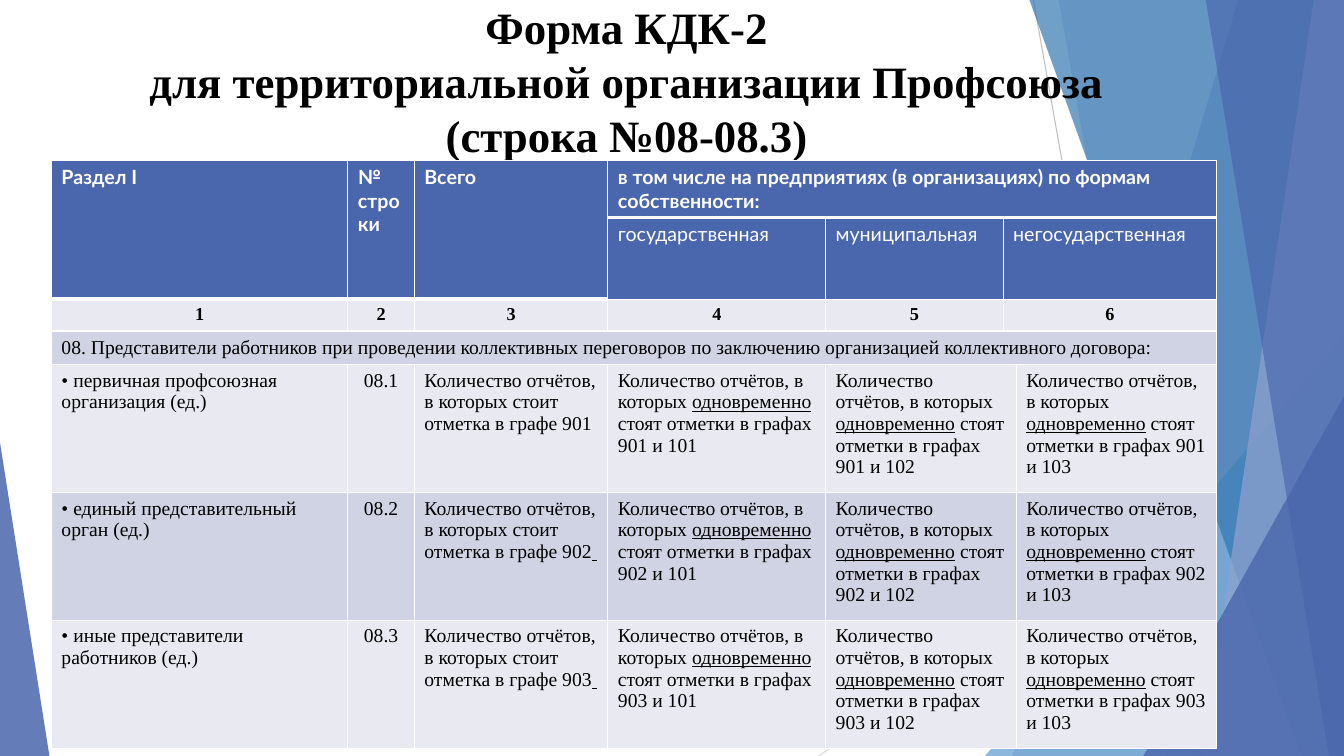
from lxml import etree
from pptx import Presentation
from pptx.dml.color import RGBColor
from pptx.enum.shapes import MSO_CONNECTOR, MSO_SHAPE
from pptx.enum.text import MSO_ANCHOR, PP_ALIGN
from pptx.oxml.ns import qn
from pptx.util import Inches, Pt

LEFT, CENTER = PP_ALIGN.LEFT, PP_ALIGN.CENTER
TOP, MIDDLE = MSO_ANCHOR.TOP, MSO_ANCHOR.MIDDLE
STRAIGHT = MSO_CONNECTOR.STRAIGHT
TRIANGLE = MSO_SHAPE.ISOSCELES_TRIANGLE

WIDTH, HEIGHT = 13.33, 7.5
SERIF, SANS = "Times New Roman", "Lato"
COLORS = {
    "indigo": "4A66AC", "sky": "629DD1", "blue": "3477B2", "lavender": "90A2CF",
    "pale": "E9EAF1", "band": "D0D3E3", "white": "FFFFFF", "black": "000000",
    "gray": "BFBFBF", "light_gray": "D9D9D9",
}

TABLE_LEFT, TABLE_TOP = 0.51, 1.59
COLUMNS = [2.94, 0.66, 1.92, 2.16, 1.76, 0.13, 1.99]
ROWS = [0.56, 0.81, 0.31, 0.33] + [1.26] * 3

# Top left x, bottom left x, colour, opacity; each band runs to the right edge.
BANDS_BACK = [(12.28, 10.04, "indigo", 30), (10.5, 11.83, "indigo", 20)]
BANDS_FRONT = [
    (10.21, 12.91, "blue", 70),
    (13.03, 11.92, "lavender", 70),
    (11.96, 13.18, "indigo", 65),
]
REPRESENTATIVES = [
    "первичная профсоюзная организация (ед.)",
    "единый представительный орган (ед.)",
    "иные представители работников (ед.)",
]


def color(name):
    return RGBColor.from_string(COLORS[name])


def paint(shape, fill, opacity):
    shape.shadow.inherit = False
    shape.fill.solid()
    shape.fill.fore_color.rgb = color(fill)
    shape.line.fill.background()
    tint = shape.fill._xPr.find(".//" + qn("a:srgbClr"))
    etree.SubElement(tint, qn("a:alpha")).set("val", str(opacity * 1000))


def add_line(slide, start, end, line_color):
    line = slide.shapes.add_connector(STRAIGHT, *map(Inches, start + end))
    line.line.color.rgb = color(line_color)
    line.line.width = Pt(0.75)
    etree.SubElement(line._element.spPr, qn("a:effectLst"))


def add_band(slide, top_x, bottom_x, fill, opacity):
    corners = [(WIDTH, 0), (WIDTH, HEIGHT), (bottom_x, HEIGHT)]
    builder = slide.shapes.build_freeform(Inches(top_x), 0)
    builder.add_line_segments([(Inches(x), Inches(y)) for x, y in corners])
    paint(builder.convert_to_shape(), fill, opacity)


def add_corner(slide, left, top, width, apex, fill, opacity):
    """Triangle standing on the bottom edge, its apex at share apex of its width."""
    box = map(Inches, (left, top, width, HEIGHT - top))
    corner = slide.shapes.add_shape(TRIANGLE, *box)
    corner.adjustments[0] = apex
    paint(corner, fill, opacity)


def add_background(slide):
    add_line(slide, (10.25, 0), (11.58, HEIGHT), "gray")
    add_line(slide, (WIDTH, 4.03), (8.12, HEIGHT), "light_gray")
    for band in BANDS_BACK:
        add_band(slide, *band)
    add_corner(slide, 9.77, 3.33, 3.56, 1, "sky", 72)
    for band in BANDS_FRONT:
        add_band(slide, *band)
    add_corner(slide, 11.34, 3.93, 1.99, 1, "indigo", 80)
    add_corner(slide, 0, 4.39, 0.49, 0, "indigo", 85)


def write(frame, text, *, size=14, font=SERIF, ink="black", bold=False, align=LEFT):
    """Fill a text frame; parts between underscores are underlined."""
    frame.word_wrap = True
    for index, line in enumerate(text.split("\n")):
        para = frame.add_paragraph() if index else frame.paragraphs[0]
        para.alignment = align
        for part, words in enumerate(line.split("_")):
            if not words:
                continue
            span = para.add_run()
            span.text = words
            span.font.name = font
            span.font.size = Pt(size)
            span.font.bold = bold
            span.font.underline = part % 2 == 1
            span.font.color.rgb = color(ink)


def add_title(slide, text):
    box = slide.shapes.add_textbox(Inches(0.96), 0, Inches(10.51), Inches(1.6))
    frame = box.text_frame
    frame.margin_top = frame.margin_bottom = 0
    frame.vertical_anchor = MIDDLE
    write(frame, text, size=32, bold=True, align=CENTER)


def set_borders(cell, bottom=1):
    properties = cell._tc.get_or_add_tcPr()
    for side, points in (("L", 1), ("R", 1), ("T", 1), ("B", bottom)):
        line = etree.SubElement(properties, qn("a:ln" + side), w=str(Pt(points)))
        fill = etree.SubElement(line, qn("a:solidFill"))
        etree.SubElement(fill, qn("a:srgbClr"), val=COLORS["white"])


def fill_cell(table, row, column, text, *, fill, span=(1, 1), anchor=TOP, **style):
    cell = table.cell(row, column)
    if span != (1, 1):
        cell.merge(table.cell(row + span[0] - 1, column + span[1] - 1))
    cell.vertical_anchor = anchor
    cell.fill.solid()
    cell.fill.fore_color.rgb = color(fill)
    write(cell.text_frame, text, **style)


def make_table(slide):
    table = slide.shapes.add_table(
        len(ROWS), len(COLUMNS), Inches(TABLE_LEFT), Inches(TABLE_TOP),
        Inches(sum(COLUMNS)), Inches(sum(ROWS))).table
    for column, width in zip(table.columns, COLUMNS):
        column.width = Inches(width)
    for index, (row, height) in enumerate(zip(table.rows, ROWS)):
        row.height = Inches(height)
        for cell in row.cells:
            set_borders(cell, bottom=1 if index else 3)
    return table


def fill_header(table):
    header = {"fill": "indigo", "font": SANS, "ink": "white"}
    for column, text in enumerate(["Раздел I", "№ строки", "Всего"]):
        fill_cell(table, 0, column, text, span=(2, 1), bold=True, **header)
    fill_cell(table, 0, 3, "в том числе на предприятиях (в организациях) "
              "по формам собственности:", span=(1, 4), bold=True, **header)
    fill_cell(table, 1, 3, "государственная", **header)
    fill_cell(table, 1, 4, "муниципальная", **header)
    fill_cell(table, 1, 5, "негосударственная", span=(1, 2), **header)
    for column in range(6):
        fill_cell(table, 2, column, str(column + 1), fill="pale", size=13, bold=True,
                  align=CENTER, span=(1, 2 if column == 5 else 1))
    fill_cell(table, 3, 0, "08. Представители работников при проведении коллективных "
              "переговоров по заключению организацией коллективного договора:",
              fill="band", span=(1, 7), anchor=MIDDLE)


def fill_representatives(table):
    reports = "Количество отчётов, в которых "
    for number, name in enumerate(REPRESENTATIVES, 1):
        row = 3 + number
        mark = 900 + number
        fill = "pale" if number % 2 else "band"
        tail = "_ _" if number > 1 else ""
        fill_cell(table, row, 0, f"• {name}", fill=fill)
        fill_cell(table, row, 1, f"08.{number}", fill=fill, align=CENTER)
        fill_cell(table, row, 2, f"{reports}стоит отметка в графе {mark}{tail}", fill=fill)
        for column, form, width in ((3, 101, 1), (4, 102, 2), (6, 103, 1)):
            fill_cell(table, row, column, f"{reports}_одновременно_ стоят отметки "
                      f"в графах {mark} и {form}", fill=fill, span=(1, width))


def main():
    deck = Presentation()
    deck.slide_width, deck.slide_height = Inches(WIDTH), Inches(HEIGHT)
    slide = deck.slides.add_slide(deck.slide_layouts[6])
    add_background(slide)
    add_title(slide, "Форма КДК-2\nдля территориальной организации Профсоюза\n"
              "(строка №08-08.3)")
    table = make_table(slide)
    fill_header(table)
    fill_representatives(table)
    deck.save("out.pptx")


if __name__ == "__main__":
    main()
